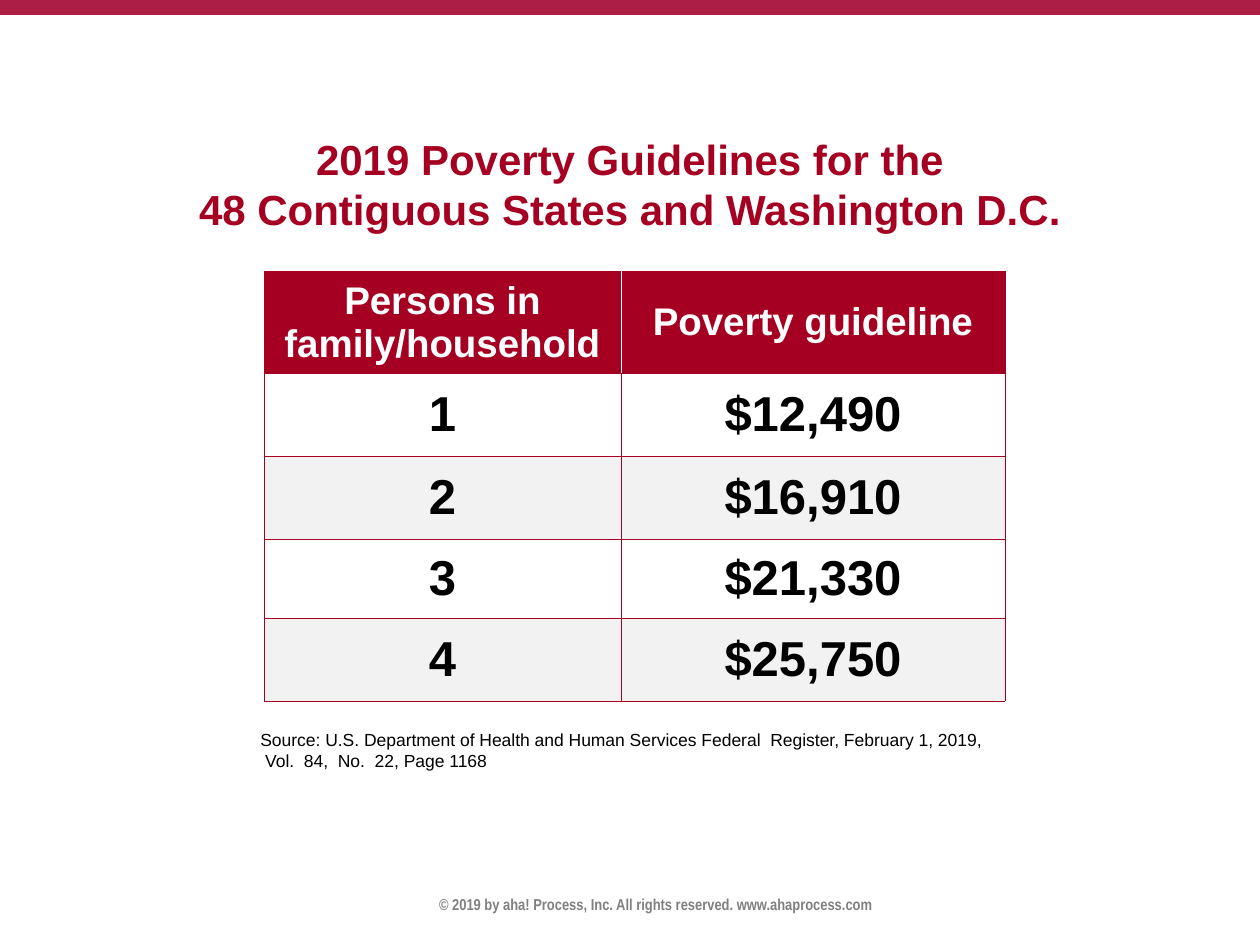
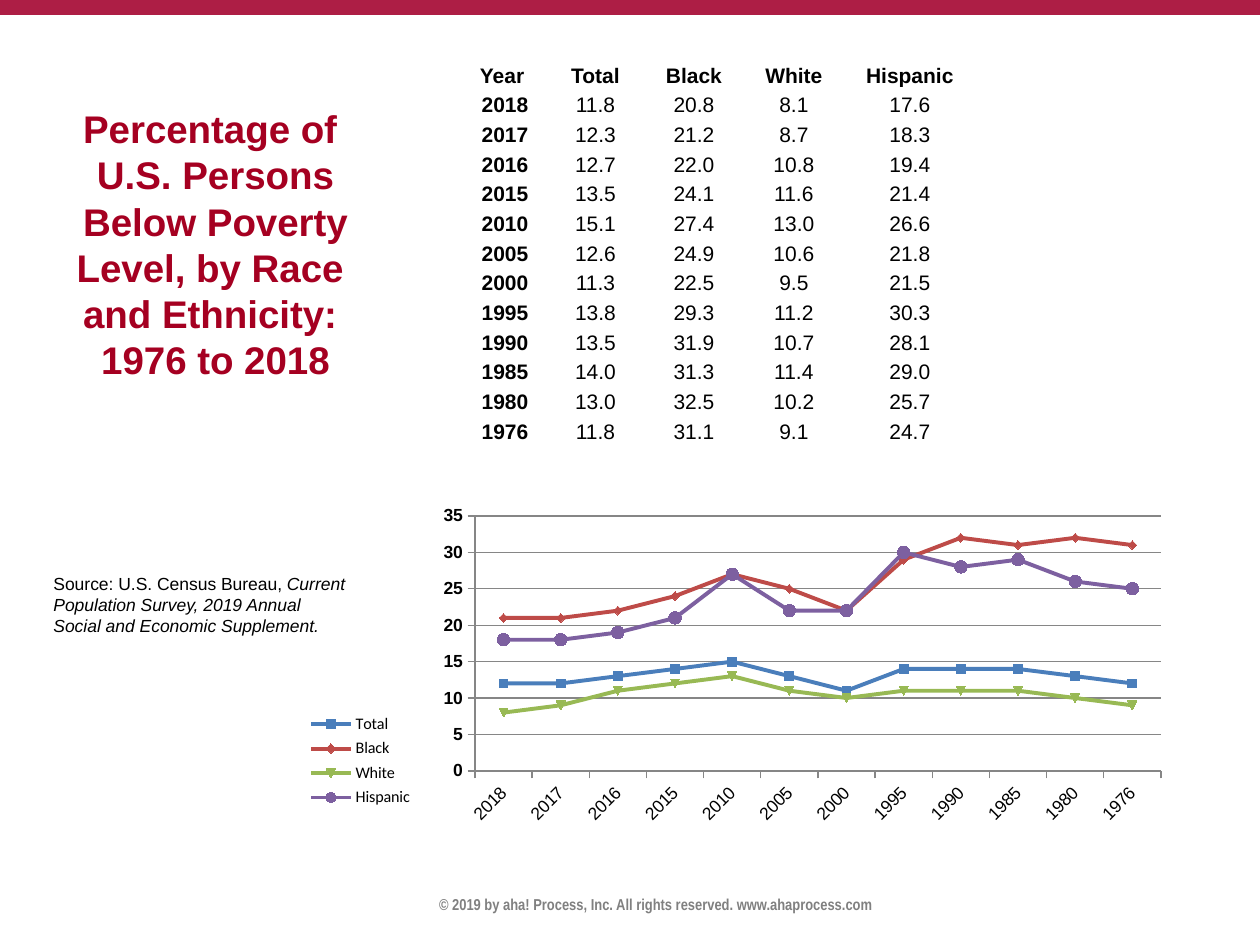
from dataclasses import dataclass
from typing import NamedTuple

from lxml.etree import SubElement
from pptx import Presentation
from pptx.chart.data import CategoryChartData
from pptx.dml.color import RGBColor
from pptx.enum.chart import XL_CHART_TYPE, XL_LEGEND_POSITION, XL_MARKER_STYLE
from pptx.enum.shapes import MSO_SHAPE
from pptx.enum.text import MSO_ANCHOR, PP_ALIGN
from pptx.oxml import parse_xml
from pptx.oxml.ns import nsdecls, qn
from pptx.util import Emu, Pt

PX_PER_INCH = 126
CRIMSON, BAND, GREY = "A50021", "AD1E45", "808080"
BLACK, WHITE, STRIPE, AXIS = "000000", "FFFFFF", "F2F2F2", "868686"
FOOTER = "© 2019 by aha! Process, Inc. All rights reserved. www.ahaprocess.com"


class Box(NamedTuple):
    left: int
    top: int
    width: int
    height: int


class Style(NamedTuple):
    size: float
    color: str = BLACK
    bold: bool = False
    italic: bool = False
    font: str = "Arial"


class Run(NamedTuple):
    text: str
    style: Style


class Insets(NamedTuple):
    left: int
    top: int
    right: int
    bottom: int


@dataclass
class TextBox:
    box: Box
    paragraphs: list[list[Run]]
    align: PP_ALIGN = PP_ALIGN.LEFT
    anchor: MSO_ANCHOR = MSO_ANCHOR.TOP


@dataclass
class Grid:
    left: int
    top: int
    widths: list[int]
    heights: list[float]
    rows: list[list[Run]]
    fills: list[str]
    insets: Insets
    anchor: MSO_ANCHOR
    border: str
    header_rule: str
    border_pt: float


class Line(NamedTuple):
    name: str
    color: str
    marker_size: int = 5
    marker: XL_MARKER_STYLE | None = None


TITLE = Style(24, CRIMSON, bold=True)
SIDE_TITLE = TITLE._replace(size=22)
SOURCE = Style(10)
HEADER = Style(22, WHITE, bold=True)
GUIDELINE = Style(28, bold=True)
FIGURE = Style(12)
FIGURE_BOLD = FIGURE._replace(bold=True)
FOOTER_STYLE = Style(9, GREY, bold=True, font="Arial Narrow")

GUIDELINES = [("1", "$12,490"), ("2", "$16,910"), ("3", "$21,330"), ("4", "$25,750")]
LINES = [
    Line("Total", "4A7EBB"),
    Line("Black", "BE4B48"),
    Line("White", "98B954"),
    Line("Hispanic", "7D60A0", 7, XL_MARKER_STYLE.CIRCLE),
]
RATES = [
    ("2018", "11.8", "20.8", "8.1", "17.6"),
    ("2017", "12.3", "21.2", "8.7", "18.3"),
    ("2016", "12.7", "22.0", "10.8", "19.4"),
    ("2015", "13.5", "24.1", "11.6", "21.4"),
    ("2010", "15.1", "27.4", "13.0", "26.6"),
    ("2005", "12.6", "24.9", "10.6", "21.8"),
    ("2000", "11.3", "22.5", "9.5", "21.5"),
    ("1995", "13.8", "29.3", "11.2", "30.3"),
    ("1990", "13.5", "31.9", "10.7", "28.1"),
    ("1985", "14.0", "31.3", "11.4", "29.0"),
    ("1980", "13.0", "32.5", "10.2", "25.7"),
    ("1976", "11.8", "31.1", "9.1", "24.7"),
]


def px(value: float) -> Emu:
    return Emu(round(value * 914400 / PX_PER_INCH))


def rgb(color: str) -> RGBColor:
    return RGBColor.from_string(color)


def style_font(font, style: Style) -> None:
    font.size, font.name = Pt(style.size), style.font
    font.bold, font.italic = style.bold, style.italic
    font.color.rgb = rgb(style.color)


def add_runs(p, runs: list[Run], align: PP_ALIGN) -> None:
    p.alignment = align
    for run in runs:
        r = p.add_run()
        r.text = run.text
        style_font(r.font, run.style)


def add_text(slide, text: TextBox) -> None:
    tf = slide.shapes.add_textbox(*map(px, text.box)).text_frame
    tf.word_wrap = True
    tf.vertical_anchor = text.anchor
    for i, runs in enumerate(text.paragraphs):
        p = tf.add_paragraph() if i else tf.paragraphs[0]
        add_runs(p, runs, text.align)


def add_border(cell, side: str, color: str, width: float) -> None:
    ln = SubElement(cell._tc.get_or_add_tcPr(), qn(f"a:ln{side}"), w=str(Pt(width)))
    fill = SubElement(ln, qn("a:solidFill"))
    SubElement(fill, qn("a:srgbClr"), val=color)


def add_grid(slide, grid: Grid) -> None:
    n_rows, n_cols = len(grid.rows), len(grid.widths)
    box = Box(grid.left, grid.top, sum(grid.widths), sum(grid.heights))
    table = slide.shapes.add_table(n_rows, n_cols, *map(px, box)).table
    table.horz_banding = False
    for column, width in zip(table.columns, grid.widths):
        column.width = px(width)
    for row, height in zip(table.rows, grid.heights):
        row.height = px(height)
    for i, runs in enumerate(grid.rows):
        for j, run in enumerate(runs):
            cell = table.cell(i, j)
            inner = {"L": j > 0, "R": j < n_cols - 1, "T": False, "B": False}
            for side, is_inner in inner.items():
                color = grid.header_rule if i == 0 and is_inner else grid.border
                add_border(cell, side, color, grid.border_pt)
            cell.fill.solid()
            cell.fill.fore_color.rgb = rgb(grid.fills[i])
            cell.margin_left, cell.margin_top = map(px, grid.insets[:2])
            cell.margin_right, cell.margin_bottom = map(px, grid.insets[2:])
            cell.vertical_anchor = grid.anchor
            add_runs(cell.text_frame.paragraphs[0], [run], PP_ALIGN.CENTER)


def set_layout(element, before: str, part: Box, frame: Box, inner: bool = False) -> None:
    """Place a chart part, measured from the corner of the chart's frame."""
    for old in element.findall(qn("c:layout")):
        element.remove(old)
    target = '<c:layoutTarget val="inner"/>' if inner else ""
    modes = '<c:xMode val="edge"/><c:yMode val="edge"/>'
    whole = (frame.width, frame.height) * 2
    sizes = "".join(f'<c:{k} val="{v / w}"/>' for k, v, w in zip("xywh", part, whole))
    layout = parse_xml(f'<c:layout {nsdecls("c")}><c:manualLayout>'
                       f"{target}{modes}{sizes}</c:manualLayout></c:layout>")
    element.find(qn(before)).addprevious(layout)


def style_line(line, color: str, width: float) -> None:
    line.color.rgb = rgb(color)
    line.width = Pt(width)


def add_rate_chart(slide, box: Box) -> None:
    years, *columns = zip(*RATES)
    data = CategoryChartData(number_format="0")
    data.categories = years
    for line, values in zip(LINES, columns):
        data.add_series(line.name, [round(float(v)) for v in values])
    chart = slide.shapes.add_chart(
        XL_CHART_TYPE.LINE_MARKERS, *map(px, box), data).chart
    style_font(chart.font, Style(10, font="Calibri"))
    chart.has_title = False
    chart.plots[0].vary_by_categories = False

    for line, series in zip(LINES, chart.plots[0].series):
        series.smooth = False
        style_line(series.format.line, line.color, 2.25)
        marker = series.marker
        marker.size = line.marker_size
        if line.marker is not None:
            marker.style = line.marker
        marker.format.fill.solid()
        marker.format.fill.fore_color.rgb = rgb(line.color)
        style_line(marker.format.line, line.color, 0.75)

    years_axis, rate_axis = chart.category_axis, chart.value_axis
    for axis, bold in ((years_axis, False), (rate_axis, True)):
        style_font(axis.tick_labels.font, Style(10, bold=bold))
        style_line(axis.format.line, AXIS, 0.75)
    body = years_axis._element.find(qn("c:txPr")).find(qn("a:bodyPr"))
    body.set("rot", "-2700000")
    body.set("vert", "horz")
    rate_axis.minimum_scale, rate_axis.maximum_scale = 0, 35
    rate_axis.major_unit = 5
    rate_axis.tick_labels.number_format = "0"
    rate_axis.tick_labels.number_format_is_linked = False
    style_line(rate_axis.major_gridlines.format.line, AXIS, 0.75)

    chart.has_legend = True
    legend = chart.legend
    legend.position = XL_LEGEND_POSITION.LEFT
    legend.include_in_layout = False
    style_font(legend.font, Style(9.2, font="Calibri"))
    set_layout(legend._element, "c:overlay", Box(60, 226, 117, 104), box)
    plot_area = chart._chartSpace.chart.plotArea
    set_layout(plot_area, "c:lineChart", Box(233, 33, 686, 255), box, inner=True)


def add_base_slide(prs):
    """Add a blank slide with the shared footer and top band."""
    slide = prs.slides.add_slide(prs.slide_layouts[6])
    add_text(slide, TextBox(Box(210, 889, 891, 32), [[Run(FOOTER, FOOTER_STYLE)]],
                            PP_ALIGN.CENTER))
    sp = slide.shapes.add_shape(MSO_SHAPE.RECTANGLE, *map(px, Box(0, 0, 1260, 15)))
    sp.shadow.inherit = False
    sp.fill.solid()
    sp.fill.fore_color.rgb = rgb(BAND)
    sp.line.fill.background()
    return slide


def build_guidelines(prs) -> None:
    slide = add_base_slide(prs)
    title = ["2019 Poverty Guidelines for the", "48 Contiguous States and Washington D.C."]
    add_text(slide, TextBox(Box(0, 116, 1260, 136), [[Run(t, TITLE)] for t in title],
                            PP_ALIGN.CENTER, MSO_ANCHOR.MIDDLE))
    source = ["Source: U.S. Department of Health and Human Services Federal  Register, "
              "February 1, 2019,", " Vol.  84,  No.  22, Page 1168"]
    add_text(slide, TextBox(Box(248, 723, 765, 55), [[Run(t, SOURCE)] for t in source]))
    header = [Run(t, HEADER) for t in ("Persons in family/household", "Poverty guideline")]
    body = [[Run(t, GUIDELINE) for t in row] for row in GUIDELINES]
    add_grid(slide, Grid(264, 271, [357, 384], [102, 83, 83, 79, 83], [header, *body],
                         [CRIMSON, WHITE, STRIPE, WHITE, STRIPE], Insets(16, 5, 16, 5),
                         MSO_ANCHOR.MIDDLE, CRIMSON, WHITE, 0.25))


def build_rates(prs) -> None:
    slide = add_base_slide(prs)
    add_rate_chart(slide, Box(242, 483, 1062, 372))
    title = ["Percentage of ", "U.S. Persons Below Poverty Level, by Race ",
             "and Ethnicity: ", "1976 to 2018"]
    add_text(slide, TextBox(Box(42, 99, 347, 332), [[Run(t, SIDE_TITLE)] for t in title],
                            PP_ALIGN.CENTER))
    source = [Run("Source: U.S. Census Bureau, ", SOURCE),
              Run("Current Population Survey, 2019 Annual Social and Economic Supplement.",
                  SOURCE._replace(italic=True))]
    add_text(slide, TextBox(Box(41, 567, 320, 77), [source]))
    header = [Run(t, FIGURE_BOLD) for t in ("Year ", *(line.name for line in LINES))]
    body = [[Run(year, FIGURE_BOLD), *(Run(v, FIGURE) for v in values)]
            for year, *values in RATES]
    rows = [header, *body]
    n = len(rows)
    add_grid(slide, Grid(463, 58, [84, 97, 100, 100, 132], [386 / n] * n, rows,
                         [WHITE] * n, Insets(1, 1, 1, 0), MSO_ANCHOR.BOTTOM,
                         WHITE, WHITE, 1))


def main() -> None:
    prs = Presentation()
    prs.slide_width, prs.slide_height = px(1260), px(945)
    build_guidelines(prs)
    build_rates(prs)
    prs.save("out.pptx")


if __name__ == "__main__":
    main()
